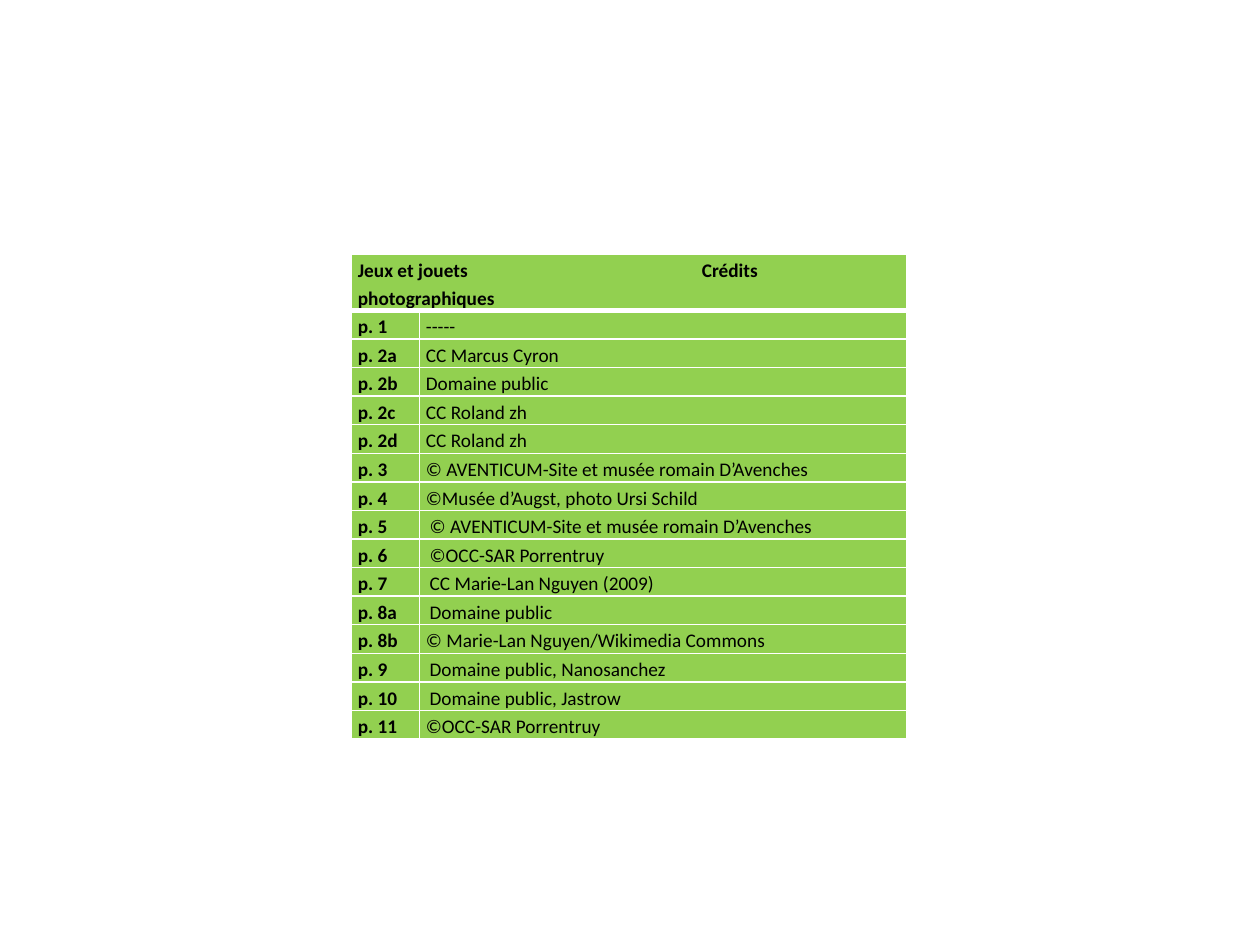
from lxml import etree
from pptx import Presentation
from pptx.dml.color import RGBColor
from pptx.oxml.ns import qn
from pptx.util import Inches, Pt

COLORS = {"cell": "92D050", "rule": "FFFFFF", "text": "000000"}
FONT = "Calibri"
BLANK_LAYOUT = 6
THIN, THICK = 1, 3
MARGIN = 0.05
INDENTED_MARGIN = 0.08
CREDITS_TAB = 2.73

HEADING = "Jeux et jouets\tCrédits\vphotographiques"
# Page, credit, whether the credit is slightly indented
CREDITS = [
    ("p. 1", "-----", False),
    ("p. 2a", "CC Marcus Cyron", False),
    ("p. 2b", "Domaine public", False),
    ("p. 2c", "CC Roland zh", False),
    ("p. 2d", "CC Roland zh", False),
    ("p. 3", "© AVENTICUM-Site et musée romain D’Avenches", False),
    ("p. 4", "©Musée d’Augst, photo Ursi Schild", False),
    ("p. 5", "© AVENTICUM-Site et musée romain D’Avenches", True),
    ("p. 6", "©OCC-SAR Porrentruy", True),
    ("p. 7", "CC Marie-Lan Nguyen (2009)", True),
    ("p. 8a", "Domaine public", True),
    ("p. 8b", "© Marie-Lan Nguyen/Wikimedia Commons", False),
    ("p. 9", "Domaine public, Nanosanchez", True),
    ("p. 10", "Domaine public, Jastrow", True),
    ("p. 11", "©OCC-SAR Porrentruy", False),
]


class CreditsSlide:
    def __init__(self, presentation):
        layout = presentation.slide_layouts[BLANK_LAYOUT]
        self.slide = presentation.slides.add_slide(layout)

    def borders(self, cell, top, bottom):
        """Rule all four sides; call before filling the cell."""
        properties = cell._tc.get_or_add_tcPr()
        for side, width in (("L", THIN), ("R", THIN), ("T", top), ("B", bottom)):
            line = etree.SubElement(properties, qn(f"a:ln{side}"), w=str(Pt(width)))
            fill = etree.SubElement(line, qn("a:solidFill"))
            etree.SubElement(fill, qn("a:srgbClr"), val=COLORS["rule"])

    def tab_stop(self, paragraph, position):
        tabs = etree.SubElement(paragraph._p.get_or_add_pPr(), qn("a:tabLst"))
        etree.SubElement(tabs, qn("a:tab"), pos=str(Inches(position)), algn="l")

    def cell(self, cell, text="", bold=False, left=MARGIN, top=THIN,
             bottom=THIN, tab=None, space_after=10):
        self.borders(cell, top, bottom)
        cell.fill.solid()
        cell.fill.fore_color.rgb = RGBColor.from_string(COLORS["cell"])
        cell.margin_left, cell.margin_right = Inches(left), Inches(MARGIN)
        cell.margin_top, cell.margin_bottom = Inches(0.01), 0
        if not text:
            return
        cell.text = text
        paragraph = cell.text_frame.paragraphs[0]
        if tab:
            self.tab_stop(paragraph, tab)
        paragraph.line_spacing = 1.15
        paragraph.space_after = Pt(space_after)
        font = paragraph.font
        font.name, font.size, font.bold = FONT, Pt(11), bold
        font.color.rgb = RGBColor.from_string(COLORS["text"])

    def credits_table(self, left, top, column_widths, row_height):
        row_count = len(CREDITS) + 1
        table = self.slide.shapes.add_table(
            row_count, len(column_widths), Inches(left), Inches(top),
            Inches(sum(column_widths)), Inches(row_height * row_count)).table
        for column, width in zip(table.columns, column_widths):
            column.width = Inches(width)

        heading, heading_end = table.cell(0, 0), table.cell(0, 1)
        heading.merge(heading_end)
        self.cell(heading, HEADING, bold=True, bottom=THICK,
                  tab=CREDITS_TAB, space_after=0)
        self.cell(heading_end, bottom=THICK)

        for row, (page, credit, indented) in enumerate(CREDITS, start=1):
            rule = THICK if row == 1 else THIN
            self.cell(table.cell(row, 0), page, bold=True, top=rule)
            self.cell(table.cell(row, 1), credit, top=rule,
                      left=INDENTED_MARGIN if indented else MARGIN)


def main():
    presentation = Presentation()
    presentation.slide_width = Inches(10)
    presentation.slide_height = Inches(7.5)
    CreditsSlide(presentation).credits_table(2.79, 2.02, (0.54, 3.87), 0.22)
    presentation.save("out.pptx")


if __name__ == "__main__":
    main()
